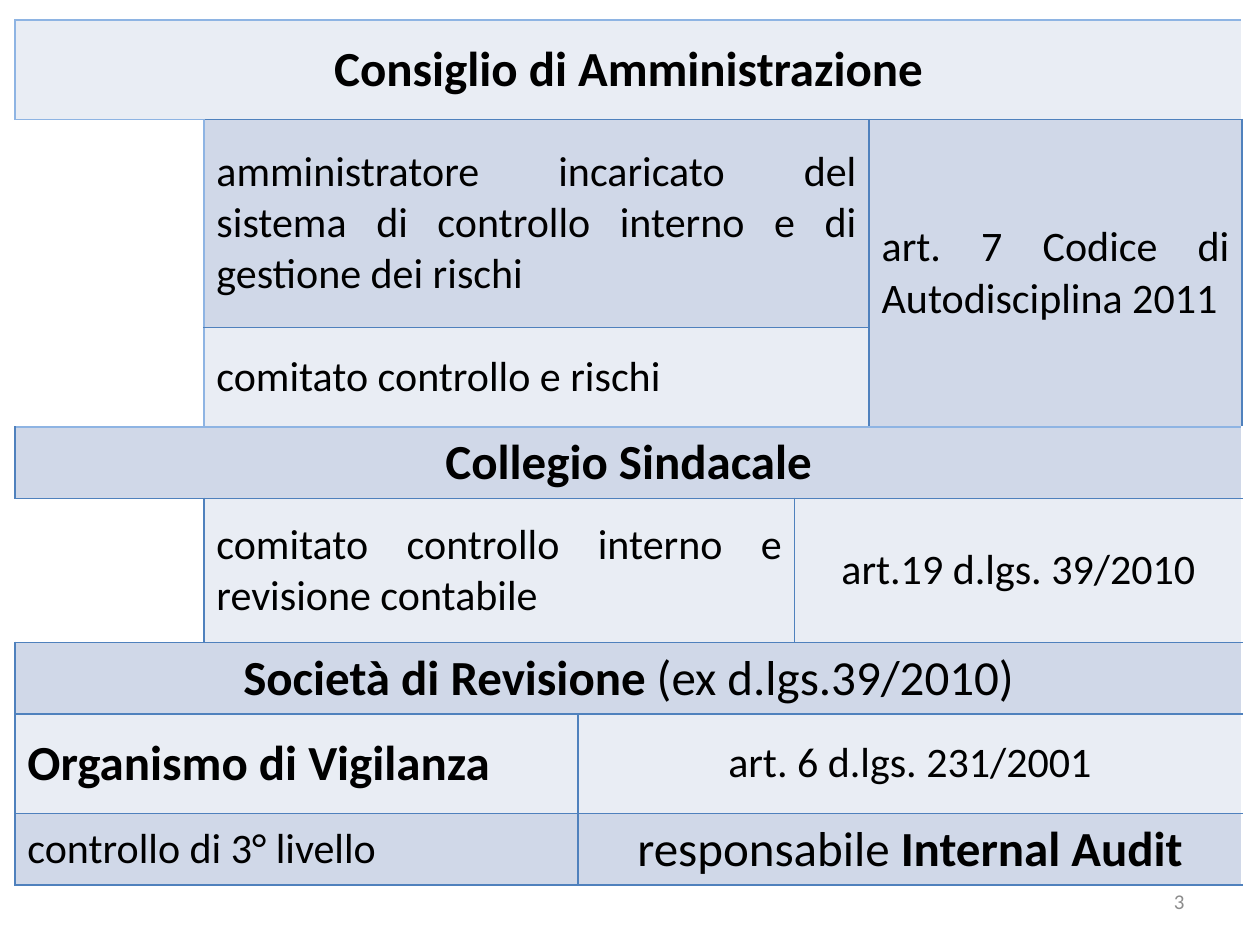
"""Build a slide with a table of the bodies in charge of internal control."""
import pptx
import pptx.util
import pptx.dml.color
import pptx.enum.text
import pptx.oxml
import pptx.oxml.ns

Cm = pptx.util.Cm
Pt = pptx.util.Pt
Align = pptx.enum.text.PP_ALIGN
Middle = pptx.enum.text.MSO_ANCHOR.MIDDLE

FONT = "Calibri"
BLACK, GREY = "000000", "8C8C8C"
PALE, BAND = "E9EDF4", "D0D8E8"
DARK, LIGHT = "4F81BD", "8EB4E3"

COLS = [3.81, 7.54, 4.37, 1.5, 7.52]
ROWS = [2.01, 4.19, 2.01, 1.25, 2.9, 1.25, 2.01, 1.25]


def color(code):
    return pptx.dml.color.RGBColor.from_string(code)


class Deck:
    def __init__(self, wide, high):
        self.prs = pptx.Presentation()
        self.prs.slide_width, self.prs.slide_height = Cm(wide), Cm(high)
        self.slide = self.prs.slides.add_slide(self.prs.slide_layouts[6])

    def label(self, frame, parts, align, tint=BLACK):
        para = frame.paragraphs[0]
        para.alignment = align
        for text, size, bold in parts:
            run = para.add_run()
            run.text = text
            run.font.name, run.font.size, run.font.bold = FONT, Pt(size), bold
            run.font.color.rgb = color(tint)

    def text(self, left, top, wide, high, parts, align, tint):
        box = self.slide.shapes.add_textbox(Cm(left), Cm(top), Cm(wide), Cm(high))
        box.text_frame.word_wrap = True
        box.text_frame.vertical_anchor = Middle
        self.label(box.text_frame, parts, align, tint)

    def table(self, left, top, cols, rows):
        frame = self.slide.shapes.add_table(
            len(rows), len(cols), Cm(left), Cm(top), Cm(sum(cols)), Cm(sum(rows)))
        self.grid = frame.table
        self.grid.first_row = self.grid.horz_banding = False
        for col, wide in zip(self.grid.columns, cols):
            col.width = Cm(wide)
        for row, high in zip(self.grid.rows, rows):
            row.height = Cm(high)

    def edge(self, cell, side, tint):
        paint = f'<a:solidFill><a:srgbClr val="{tint}"/></a:solidFill>' if tint else "<a:noFill/>"
        line = pptx.oxml.parse_xml(
            f'<a:ln{side} {pptx.oxml.ns.nsdecls("a")} w="{Pt(1)}">{paint}</a:ln{side}>')
        cell._tc.get_or_add_tcPr().append(line)

    def cell(self, row, col, down, over, parts, align, fill, light="", bare=""):
        last, end = row + down - 1, col + over - 1
        for r in range(row, last + 1):
            for c in range(col, end + 1):
                outer = {"L": c == col, "R": c == end, "T": r == row, "B": r == last}
                for side in (s for s in outer if outer[s]):
                    tint = None if side in bare else LIGHT if side in light else DARK
                    self.edge(self.grid.cell(r, c), side, tint)
        cell = self.grid.cell(row, col)
        if down * over > 1:
            cell.merge(self.grid.cell(last, end))
        if fill:
            cell.fill.solid()
            cell.fill.fore_color.rgb = color(fill)
        else:
            cell.fill.background()
        cell.vertical_anchor = Middle
        self.label(cell.text_frame, parts, align)


def head(text):
    return [(text, 28, True)]


def body(text):
    return [(text, 24, False)]


def main():
    mid, full = Align.CENTER, Align.JUSTIFY
    deck = Deck(25.4, 19.05)
    deck.text(18.21, 17.65, 5.92, 1.02, [("3", 12, False)], Align.RIGHT, GREY)
    deck.table(0.3, 0.4, COLS, ROWS)
    cells = [
        (0, 0, 1, 5, head("Consiglio di Amministrazione"), mid, PALE, "LTB"),
        (1, 0, 2, 1, [], full, None, "TRB", "L"),
        (1, 1, 1, 3, body("amministratore incaricato del sistema di controllo "
                          "interno e di gestione dei rischi"), full, BAND, "L"),
        (1, 4, 2, 1, body("art. 7 Codice di Autodisciplina 2011"), full, BAND),
        (2, 1, 1, 3, body("comitato controllo e rischi"), full, PALE, "L"),
        (3, 0, 1, 5, head("Collegio Sindacale"), mid, BAND, "T"),
        (4, 0, 1, 1, [], full, None, "", "L"),
        (4, 1, 1, 2, body("comitato controllo interno e revisione contabile"), full, PALE),
        (4, 3, 1, 2, body("art.19 d.lgs. 39/2010"), mid, PALE),
        (5, 0, 1, 5, head("Società di Revisione ") + [("(ex d.lgs.39/2010)", 28, False)],
         mid, BAND),
        (6, 0, 1, 2, head("Organismo di Vigilanza"), full, PALE),
        (6, 2, 1, 3, body("art. 6 d.lgs. 231/2001"), mid, PALE),
        (7, 0, 1, 2, body("controllo di 3° livello"), full, BAND),
        (7, 2, 1, 3, [("responsabile ", 28, False)] + head("Internal Audit"), mid, BAND),
    ]
    for item in cells:
        deck.cell(*item)
    deck.prs.save("out.pptx")


if __name__ == "__main__":
    main()
